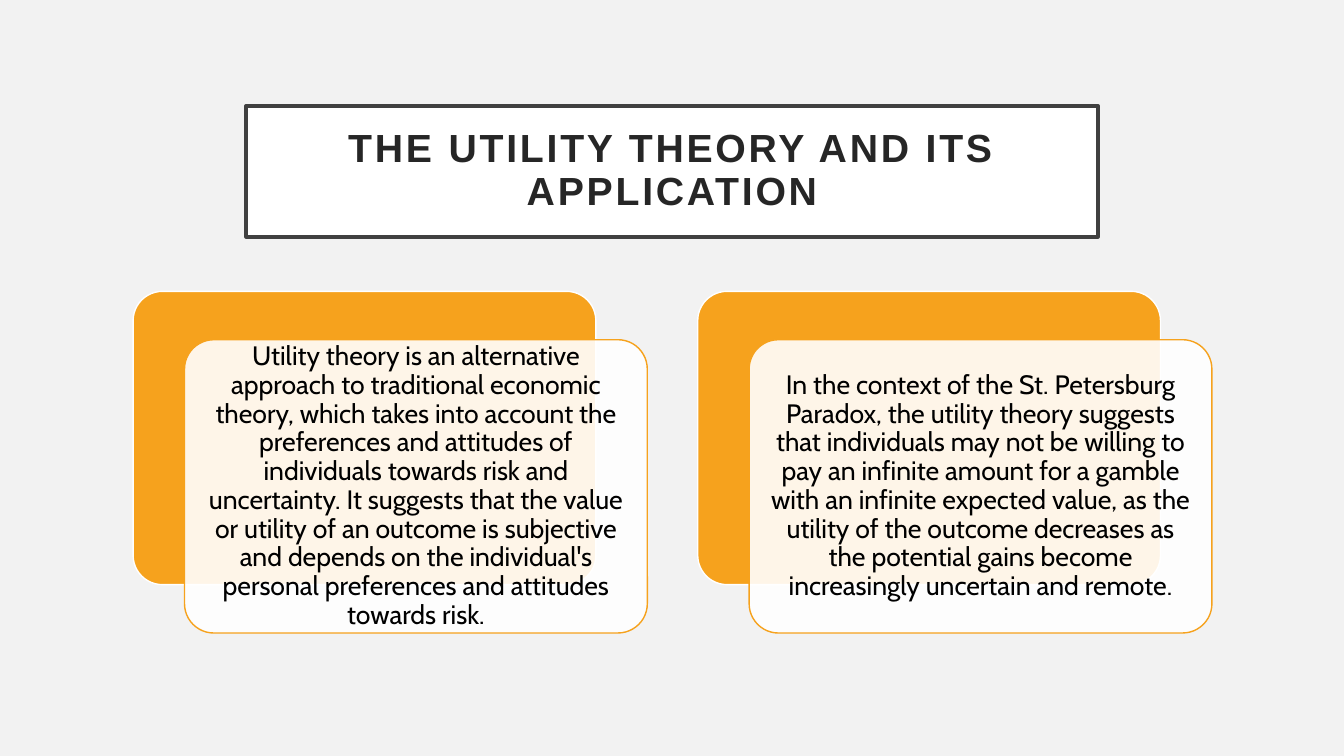
from pptx import Presentation
from pptx.dml.color import RGBColor
from pptx.enum.shapes import MSO_SHAPE as Shape
from pptx.enum.text import MSO_ANCHOR as Anchor, PP_ALIGN as Align
from pptx.oxml.xmlchemy import OxmlElement
from pptx.util import Inches, Pt

TITLE = "THE UTILITY THEORY AND ITS APPLICATION"
CARDS = [
    "Utility theory is an alternative approach to traditional economic theory, "
    "which takes into account the preferences and attitudes of individuals "
    "towards risk and uncertainty. It suggests that the value or utility of an "
    "outcome is subjective and depends on the individual's personal preferences "
    "and attitudes towards risk.",
    "In the context of the St. Petersburg Paradox, the utility theory suggests "
    "that individuals may not be willing to pay an infinite amount for a gamble "
    "with an infinite expected value, as the utility of the outcome decreases as "
    "the potential gains become increasingly uncertain and remote.",
]

THEME = {
    "background": "F2F2F2", "white": "FFFFFF", "accent": "F6A21D",
    "frame": "404040", "title": "262626", "body": "000000",
    "title_font": "Arial", "body_font": "Cabin",
    "title_size": 28, "body_size": 19, "title_tracking": 2,
}

TITLE_BOX = (2.44, 1.05, 8.45, 1.3)
CARD_LEFT, CARD_TOP, CARD_W, CARD_H = 1.32, 2.89, 4.59, 2.91
CARD_PITCH = 5.6
FRONT_DX, FRONT_DY = 0.51, 0.48
TEXT_INSET = 0.085
CORNER = 0.1
FRONT_OPACITY = 90


def color(name):
    return RGBColor.from_string(THEME[name])


def add_panel(slide, kind, box, fill, line, width):
    sp = slide.shapes.add_shape(kind, *map(Inches, box))
    sp.shadow.inherit = False
    sp.fill.solid()
    sp.fill.fore_color.rgb = color(fill)
    sp.line.color.rgb = color(line)
    sp.line.width = Pt(width)
    if kind == Shape.ROUNDED_RECTANGLE:
        sp.adjustments[0] = CORNER
    return sp


def set_opacity(sp, percent):
    alpha = OxmlElement("a:alpha")
    alpha.set("val", str(percent * 1000))
    sp.fill._xPr.solidFill[0].append(alpha)


def write(sp, text, style, margin, bold=False):
    tf = sp.text_frame
    tf.text = text
    tf.word_wrap = True
    tf.vertical_anchor = Anchor.MIDDLE
    tf.margin_left = tf.margin_right = Inches(margin)
    tf.margin_top = tf.margin_bottom = Inches(margin)
    p = tf.paragraphs[0]
    p.alignment = Align.CENTER
    p.line_spacing = 0.9
    r = p.runs[0]
    r.font.name = THEME[f"{style}_font"]
    r.font.size = Pt(THEME[f"{style}_size"])
    r.font.color.rgb = color(style)
    r.font.bold = bold
    return r


def add_card(slide, left, text):
    front_left, front_top = left + FRONT_DX, CARD_TOP + FRONT_DY
    add_panel(slide, Shape.ROUNDED_RECTANGLE, (left, CARD_TOP, CARD_W, CARD_H),
              "accent", "white", 1)
    front = add_panel(slide, Shape.ROUNDED_RECTANGLE,
                      (front_left, front_top, CARD_W, CARD_H),
                      "white", "accent", 1)
    set_opacity(front, FRONT_OPACITY)
    box = (front_left + TEXT_INSET, front_top + TEXT_INSET,
           CARD_W - 2 * TEXT_INSET, CARD_H - 2 * TEXT_INSET)
    write(slide.shapes.add_textbox(*map(Inches, box)), text, "body", 0.08)


def main():
    prs = Presentation()
    prs.slide_width, prs.slide_height = Inches(13.33), Inches(7.5)
    s = prs.slides.add_slide(prs.slide_layouts[6])
    s.background.fill.solid()
    s.background.fill.fore_color.rgb = color("background")

    title = add_panel(s, Shape.RECTANGLE, TITLE_BOX, "white", "frame", 2.5)
    r = write(title, TITLE, "title", 0.2, bold=True)
    r.font._element.set("spc", str(THEME["title_tracking"] * 100))

    for i, text in enumerate(CARDS):
        add_card(s, CARD_LEFT + i * CARD_PITCH, text)
    prs.save("out.pptx")


if __name__ == "__main__":
    main()
